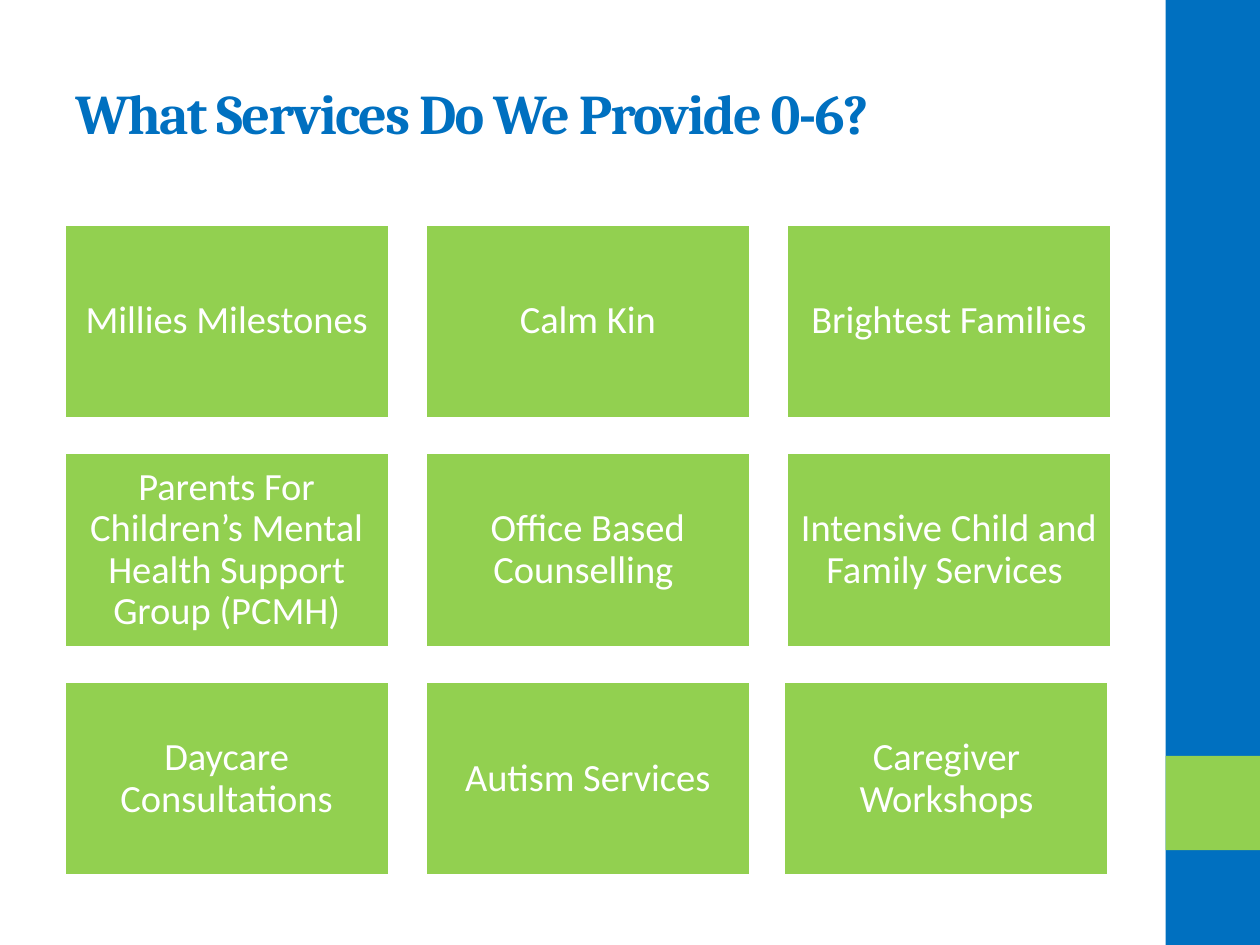
from dataclasses import dataclass
from typing import Optional

from pptx import Presentation
from pptx.dml.color import RGBColor
from pptx.enum.shapes import MSO_SHAPE
from pptx.enum.text import MSO_ANCHOR, PP_ALIGN
from pptx.util import Cm, Pt

BLUE = RGBColor(0x00, 0x70, 0xC0)
GREEN = RGBColor(0x92, 0xD0, 0x50)
WHITE = RGBColor(0xFF, 0xFF, 0xFF)

TITLE_FONT = {"name": "Cambria", "size": Pt(32), "bold": True}
CARD_FONT = {"name": "Calibri", "size": Pt(22)}
CARD_FRAME = {
    "word_wrap": True,
    "vertical_anchor": MSO_ANCHOR.MIDDLE,
    "margin_left": Cm(0.23),
    "margin_right": Cm(0.23),
    "margin_top": Cm(0.23),
    "margin_bottom": Cm(0.23),
}
TITLE_FRAME = {"word_wrap": True, "vertical_anchor": MSO_ANCHOR.MIDDLE}

# Card grid, in centimetres
GRID_LEFT, GRID_TOP = 1.27, 4.5
COLUMN_STEP, ROW_STEP = 7.28, 4.61
CARD_WIDTH, CARD_HEIGHT = 6.6, 3.96

SERVICES = [
    ["Millies Milestones", "Calm Kin", "Brightest Families"],
    [
        "Parents For Children’s Mental Health Support Group (PCMH)",
        "Office Based Counselling ",
        "Intensive Child and Family Services ",
    ],
    ["Daycare Consultations", "Autism Services", "Caregiver Workshops"],
]
NUDGES = {"Caregiver Workshops": -0.05}


@dataclass
class Block:
    left: float
    top: float
    width: float
    height: float
    fill: RGBColor
    outline: Optional[RGBColor] = None


def apply_format(target, values: dict) -> None:
    for name, value in values.items():
        setattr(target, name, value)


def draw_block(page, block: Block):
    box = page.shapes.add_shape(
        MSO_SHAPE.RECTANGLE,
        Cm(block.left), Cm(block.top), Cm(block.width), Cm(block.height),
    )
    box.shadow.inherit = False
    box.fill.solid()
    box.fill.fore_color.rgb = block.fill
    if block.outline is None:
        box.line.fill.background()
    else:
        box.line.color.rgb = block.outline
        box.line.width = Pt(3)
    return box


def write_text(box, text: str, frame: dict, font: dict,
               color: RGBColor, alignment: PP_ALIGN):
    apply_format(box.text_frame, frame)
    para = box.text_frame.paragraphs[0]
    apply_format(para, {"alignment": alignment, "line_spacing": 0.9})
    span = para.add_run()
    span.text = text
    apply_format(span.font, font)
    span.font.color.rgb = color
    return span


def main() -> None:
    deck = Presentation()
    deck.slide_width, deck.slide_height = Cm(25.4), Cm(19.05)
    page = deck.slides.add_slide(deck.slide_layouts[6])

    # Side band with its accent square
    draw_block(page, Block(23.5, 0, 1.9, 19.05, BLUE))
    draw_block(page, Block(23.5, 15.24, 1.9, 1.9, GREEN))

    # Title, with tightened letter spacing
    title = page.shapes.add_textbox(Cm(1.27), Cm(0.76), Cm(21.16), Cm(3.18))
    span = write_text(title, "What Services Do We Provide 0-6?",
                      TITLE_FRAME, TITLE_FONT, BLUE, PP_ALIGN.LEFT)
    span.font._element.set("spc", "-100")

    # Service cards
    for row, names in enumerate(SERVICES):
        for column, name in enumerate(names):
            left = GRID_LEFT + column * COLUMN_STEP + NUDGES.get(name, 0)
            top = GRID_TOP + row * ROW_STEP
            card = draw_block(
                page, Block(left, top, CARD_WIDTH, CARD_HEIGHT, GREEN, WHITE))
            write_text(card, name, CARD_FRAME, CARD_FONT, WHITE, PP_ALIGN.CENTER)

    deck.save("out.pptx")


if __name__ == "__main__":
    main()
